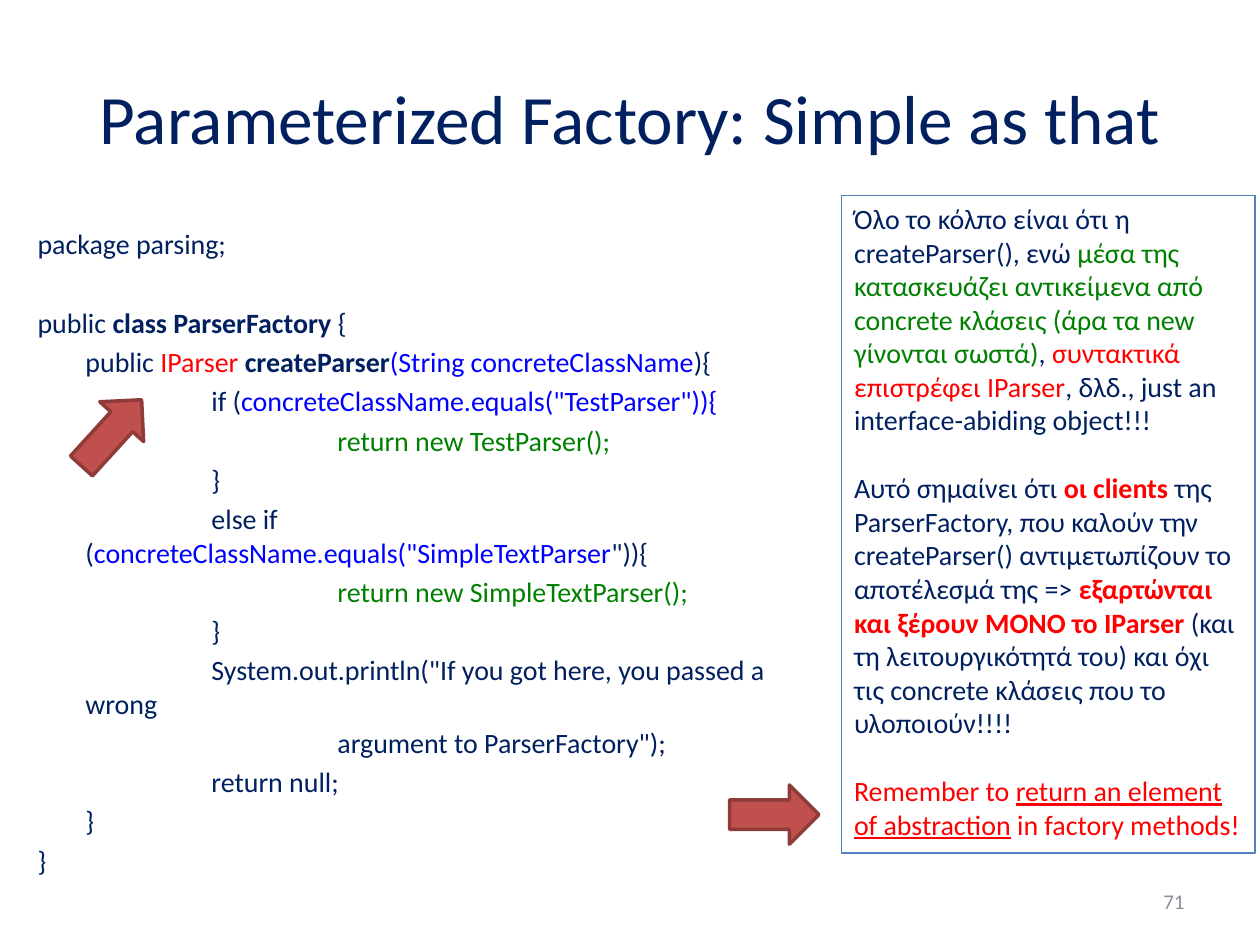
import dataclasses

import pptx
import pptx.dml.color
import pptx.enum.shapes
import pptx.enum.text
import pptx.util

Inches = pptx.util.Inches
Pt = pptx.util.Pt
ALIGN = pptx.enum.text.PP_ALIGN
ANCHOR = pptx.enum.text.MSO_ANCHOR
SHAPE = pptx.enum.shapes.MSO_SHAPE


@dataclasses.dataclass(frozen=True)
class Theme:
    font: str = "Calibri"
    navy: str = "002060"
    red: str = "FF0000"
    blue: str = "0000FF"
    green: str = "008000"
    grey: str = "8C8D9D"
    arrow: str = "C0504D"
    arrow_line: str = "8E3B39"
    border: str = "4F81BD"
    title: float = 39.6
    body: float = 16
    number: float = 12
    line_gap: float = 3.2
    blank_line: float = 19.5


THEME = Theme()
BOLD = {"bold": True}
BLUE = {"color": THEME.blue}
GREEN = {"color": THEME.green}
RED = {"color": THEME.red}
RED_BOLD = RED | BOLD
RED_UNDERLINE = RED | {"underline": True}

CODE = [
    [("package parsing;", {})],
    [("public ", {}), ("class ParserFactory ", BOLD), ("{", {})],
    [("\tpublic ", {}), ("IParser ", RED), ("createParser", BOLD),
     ("(String concreteClassName", BLUE), ("){", {})],
    [("\t\tif (", {}), ('concreteClassName.equals("TestParser")){', BLUE)],
    [("\t\t\treturn new TestParser();", GREEN)],
    [("\t\t}", {})],
    [("\t\telse if (", {}), ('concreteClassName.equals("SimpleTextParser', BLUE), ('")){', {})],
    [("\t\t\treturn new SimpleTextParser();", GREEN)],
    [("\t\t}", {})],
    [('\t\tSystem.out.println("If you got here, you passed a wrong', {})],
    [('\t\t\targument to ParserFactory");', {})],
    [("\t\treturn null;", {})],
    [("\t}", {})],
    [("}", {})],
]

REMARKS = [
    [("Όλο το κόλπο είναι ότι η createParser(), ενώ ", {}),
     ("μέσα της κατασκευάζει αντικείμενα από concrete κλάσεις (άρα τα new γίνονται σωστά)", GREEN),
     (", ", {}), ("συντακτικά επιστρέφει IParser", RED),
     (", δλδ., just an interface-abiding object!!!", {})],
    [("Αυτό σημαίνει ότι ", {}), ("οι clients ", RED_BOLD),
     ("της ParserFactory, που καλούν την createParser() αντιμετωπίζουν το αποτέλεσμά της => ", {}),
     ("εξαρτώνται και ξέρουν ΜΟΝΟ το IParser", RED_BOLD),
     (" (και τη λειτουργικότητά του) και όχι τις concrete κλάσεις που το υλοποιούν!!!!", {})],
    [("Remember to ", RED), ("return an element of abstraction", RED_UNDERLINE),
     (" in factory methods!", RED)],
]


def rgb(value):
    return pptx.dml.color.RGBColor.from_string(value)


def add_runs(p, runs, size=THEME.body):
    for text, changes in runs:
        r = p.add_run()
        r.text = text
        fmt = {"name": THEME.font, "size": Pt(size), "color": THEME.navy} | changes
        r.font.color.rgb = rgb(fmt.pop("color"))
        for name, value in fmt.items():
            setattr(r.font, name, value)


def add_paragraphs(tf, paragraphs, align=ALIGN.LEFT):
    for i, runs in enumerate(paragraphs):
        p = tf.paragraphs[0] if i == 0 else tf.add_paragraph()
        p.alignment = align
        add_runs(p, runs)


def place(sp, box):
    for name, value in zip(("left", "top", "width", "height"), box):
        setattr(sp, name, Inches(value))


def add_title(s, box):
    sp = s.shapes.title
    place(sp, box)
    tf = sp.text_frame
    tf.vertical_anchor = ANCHOR.MIDDLE
    p = tf.paragraphs[0]
    p.alignment = ALIGN.CENTER
    add_runs(p, [("Parameterized Factory: Simple as that", {})], THEME.title)


def add_code(s, box):
    tf = s.shapes.add_textbox(*map(Inches, box)).text_frame
    tf.word_wrap = True
    add_paragraphs(tf, CODE)
    for i, p in enumerate(tf.paragraphs):
        gap = THEME.line_gap
        if i == 1:
            gap += THEME.blank_line + THEME.line_gap
        p.space_before = Pt(gap)
        pPr = p._p.get_or_add_pPr()
        for name, value in {"marL": 0.38, "indent": -0.38, "defTabSz": 1}.items():
            pPr.set(name, str(Inches(value)))


def add_remarks(s, box):
    sp = s.shapes.add_shape(SHAPE.RECTANGLE, *map(Inches, box))
    sp.shadow.inherit = False
    sp.fill.background()
    sp.line.color.rgb = rgb(THEME.border)
    sp.line.width = Pt(0.75)
    tf = sp.text_frame
    tf.word_wrap = True
    tf.vertical_anchor = ANCHOR.TOP
    tf.auto_size = pptx.enum.text.MSO_AUTO_SIZE.SHAPE_TO_FIT_TEXT
    add_paragraphs(tf, REMARKS)
    for p in tf.paragraphs[1:]:
        p.space_before = Pt(THEME.blank_line)


def add_arrow(s, box, rotation):
    sp = s.shapes.add_shape(SHAPE.DOWN_ARROW, *map(Inches, box))
    sp.shadow.inherit = False
    sp.rotation = rotation
    sp.fill.solid()
    sp.fill.fore_color.rgb = rgb(THEME.arrow)
    sp.line.color.rgb = rgb(THEME.arrow_line)
    sp.line.width = Pt(2)


def add_number(s, box):
    tf = s.shapes.add_textbox(*map(Inches, box)).text_frame
    tf.word_wrap = True
    tf.vertical_anchor = ANCHOR.MIDDLE
    p = tf.paragraphs[0]
    p.alignment = ALIGN.RIGHT
    add_runs(p, [("71", {"color": THEME.grey})], THEME.number)


def main():
    prs = pptx.Presentation()
    prs.slide_width, prs.slide_height = Inches(10), Inches(7.5)
    s = prs.slides.add_slide(prs.slide_layouts[5])
    add_title(s, (0.5, 0.3, 9, 1.25))
    add_code(s, (0.2, 1.75, 6.39, 4.95))
    add_number(s, (7.17, 6.95, 2.33, 0.4))
    add_arrow(s, (0.65, 3.08, 0.47, 0.71), 222.3)
    add_remarks(s, (6.68, 1.55, 3.28, 5.22))
    add_arrow(s, (5.91, 6.11, 0.47, 0.71), 270)
    prs.save("out.pptx")


if __name__ == "__main__":
    main()
